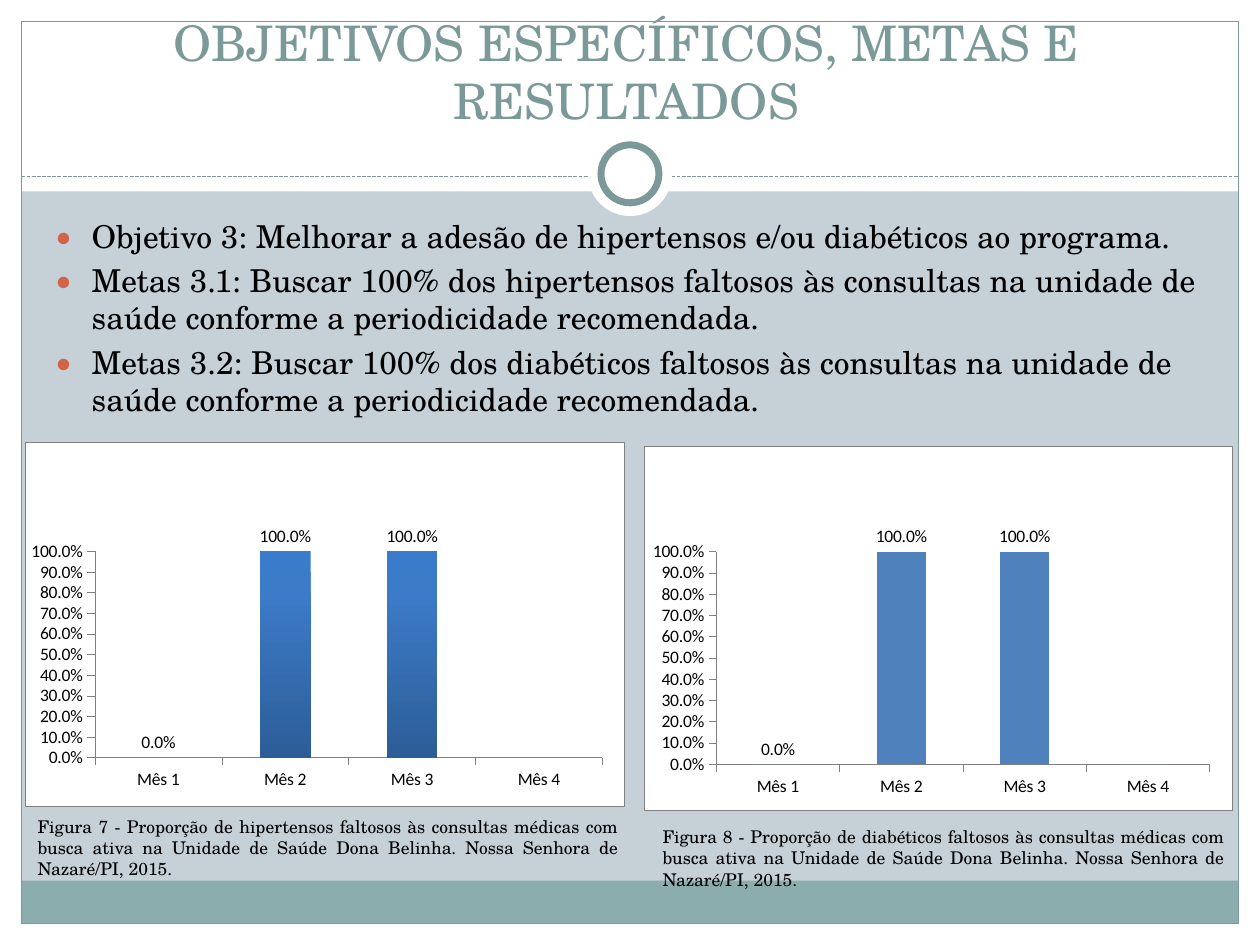
import copy

import pptx
import pptx.chart.data
import pptx.dml.color
import pptx.enum.chart
import pptx.enum.dml
import pptx.enum.shapes
import pptx.enum.text
import pptx.oxml
import pptx.oxml.ns
import pptx.util

RGB = pptx.dml.color.RGBColor
Pt = pptx.util.Pt
SHAPE = pptx.enum.shapes.MSO_SHAPE
ALIGN = pptx.enum.text.PP_ALIGN
qn = pptx.oxml.ns.qn

WHITE, BLACK = RGB(255, 255, 255), RGB(0, 0, 0)
PALE, TEAL, SLATE = RGB(0xC5, 0xD1, 0xD7), RGB(0x8C, 0xAD, 0xAE), RGB(0x7C, 0x99, 0x9A)
ORANGE, GREY, BLUE = RGB(0xD1, 0x63, 0x49), RGB(0x80, 0x80, 0x80), RGB(0x4F, 0x81, 0xBD)
BAR_GRADIENT = [(0, RGB(0x3A, 0x7C, 0xCB)), (0.2, RGB(0x3C, 0x7B, 0xC7)), (1, RGB(0x2C, 0x5D, 0x98))]
SERIF, SANS = "TeX Gyre Schola", "Calibri"

TITLE = "OBJETIVOS ESPECÍFICOS, METAS E RESULTADOS"
GOALS = [
    "Objetivo 3: Melhorar a adesão de hipertensos e/ou diabéticos ao programa.",
    "Metas 3.1: Buscar 100% dos hipertensos faltosos às consultas na unidade de saúde "
    "conforme a periodicidade recomendada.",
    "Metas 3.2: Buscar 100% dos diabéticos faltosos às consultas na unidade de saúde "
    "conforme a periodicidade recomendada.",
]
CAPTION = ("Figura {} - Proporção de {} faltosos às consultas médicas com busca ativa na "
           "Unidade de Saúde Dona Belinha. Nossa Senhora de Nazaré/PI, 2015.")
MONTHS = ["Mês 1", "Mês 2", "Mês 3", "Mês 4"]
RATES = [0, 1, 1, 0]
FIGURES = [
    dict(number=7, group="hipertensos", chart=(0.2, 3.51, 4.76, 2.89), caption=(0.2, 6.43, 4.8, 0.61),
         plot=(0.116, 0.3, 0.847, 0.567), gradient=True),
    dict(number=8, group="diabéticos", chart=(5.11, 3.54, 4.67, 2.89), caption=(5.16, 6.51, 4.65, 0.61),
         plot=(0.123, 0.29, 0.839, 0.584), gradient=False),
]

W, H, MARGIN = 10, 7.5, 0.17
HEADER, BAND, RULE_Y = 1.52, 0.34, 1.4


def inches(*lengths):
    return [pptx.util.Inches(v) for v in lengths]


def add_shape(slide, kind, box, fill=None, line=None, width=0.75):
    sp = slide.shapes.add_shape(kind, *inches(*box))
    sp.shadow.inherit = False
    if fill is None:
        sp.fill.background()
    else:
        sp.fill.solid()
        sp.fill.fore_color.rgb = fill
    if line is None:
        sp.line.fill.background()
    else:
        sp.line.color.rgb = line
        sp.line.width = Pt(width)


def add_frame(slide):
    inner_w, inner_h = W - 2 * MARGIN, H - 2 * MARGIN
    for box in [(0, H - MARGIN, W, MARGIN), (0, 0, W, HEADER),
                (0, 0, MARGIN, H), (W - MARGIN, 0, MARGIN, H)]:
        add_shape(slide, SHAPE.RECTANGLE, box, WHITE)
    add_shape(slide, SHAPE.RECTANGLE, (MARGIN, H - MARGIN - BAND, inner_w, BAND), TEAL)
    add_shape(slide, SHAPE.RECTANGLE, (MARGIN, MARGIN, inner_w, inner_h), line=SLATE)

    rule = slide.shapes.add_connector(pptx.enum.shapes.MSO_CONNECTOR.STRAIGHT,
                                      *inches(MARGIN, RULE_Y, W - MARGIN, RULE_Y))
    rule.line.color.rgb = SLATE
    rule.line.width = Pt(0.75)
    rule.line.dash_style = pptx.enum.dml.MSO_LINE.SQUARE_DOT
    sp_pr = rule._element.spPr
    sp_pr.append(sp_pr.makeelement(qn("a:effectLst"), {}))

    for size, line in [(0.67, None), (0.46, SLATE)]:
        box = (W / 2 - size / 2, 1.38 - size / 2, size, size)
        add_shape(slide, SHAPE.OVAL, box, WHITE, line, 4)


def style(p, size, color, align):
    p.alignment = align
    for r in p.runs:
        r.font.name, r.font.size, r.font.color.rgb = SERIF, Pt(size), color


def add_bullet(p):
    p_pr = p._p.get_or_add_pPr()
    indent = pptx.util.Inches(0.3)
    p_pr.set("marL", str(indent))
    p_pr.set("indent", str(-indent))
    color = p_pr.makeelement(qn("a:buClr"), {})
    color.append(color.makeelement(qn("a:srgbClr"), {"val": str(ORANGE)}))
    p_pr.append(color)
    for tag, key, value in [("a:buSzPct", "val", "85000"), ("a:buFont", "typeface", SERIF),
                            ("a:buChar", "char", "●")]:
        p_pr.append(p_pr.makeelement(qn(tag), {key: value}))


def add_text(slide, box, paragraphs, size, align):
    tf = slide.shapes.add_textbox(*inches(*box)).text_frame
    tf.word_wrap = True
    tf.text = "\n".join(paragraphs)
    for p in tf.paragraphs:
        style(p, size, BLACK, align)
    return tf


def area_format(border):
    """White chart area, with a thin grey border or none."""
    line = f'<a:solidFill><a:srgbClr val="{GREY}"/></a:solidFill>' if border else "<a:noFill/>"
    return pptx.oxml.parse_xml(
        f'<c:spPr {pptx.oxml.ns.nsdecls("c", "a")}><a:solidFill><a:srgbClr val="{WHITE}"/></a:solidFill>'
        f'<a:ln w="{Pt(0.25)}">{line}</a:ln></c:spPr>')


def place_plot(chart, plot):
    """Set the inner plot area as shares of the chart, and fill the backgrounds."""
    area = chart._chartSpace.chart.plotArea
    for old in area.findall(qn("c:layout")):
        area.remove(old)
    shares = "".join(f'<c:{k} val="{v}"/>' for k, v in zip("xywh", plot))
    area.insert(0, pptx.oxml.parse_xml(
        f'<c:layout {pptx.oxml.ns.nsdecls("c")}><c:manualLayout><c:layoutTarget val="inner"/>'
        f'<c:xMode val="edge"/><c:yMode val="edge"/>{shares}</c:manualLayout></c:layout>'))
    area.append(area_format(border=False))
    chart._chartSpace.chart.addnext(area_format(border=True))


def fill_bars(series, gradient):
    fill = series.format.fill
    if not gradient:
        fill.solid()
        fill.fore_color.rgb = BLUE
        return
    fill.gradient()
    fill.gradient_angle = 270
    first = series._element.find(".//" + qn("a:gs"))
    first.addnext(copy.deepcopy(first))
    for stop, (position, color) in zip(fill.gradient_stops, BAR_GRADIENT):
        stop.position, stop.color.rgb = position, color


def label_bars(series):
    labels = series.data_labels
    labels.show_value = True
    labels.number_format, labels.number_format_is_linked = "0.0%", False
    labels.position = pptx.enum.chart.XL_LABEL_POSITION.OUTSIDE_END
    labels._element.insert(0, pptx.oxml.parse_xml(
        f'<c:dLbl {pptx.oxml.ns.nsdecls("c")}><c:idx val="{len(MONTHS) - 1}"/><c:delete val="1"/></c:dLbl>'))


def add_column_chart(slide, box, plot, gradient):
    data = pptx.chart.data.CategoryChartData(number_format="0.0%")
    data.categories = MONTHS
    data.add_series("Series 1", RATES)
    chart = slide.shapes.add_chart(pptx.enum.chart.XL_CHART_TYPE.COLUMN_CLUSTERED,
                                   *inches(*box), data).chart
    chart.has_title = chart.has_legend = False
    chart.font.name, chart.font.size, chart.font.color.rgb = SANS, Pt(10), BLACK
    for axis in (chart.category_axis, chart.value_axis):
        axis.has_major_gridlines = False
        axis.major_tick_mark = pptx.enum.chart.XL_TICK_MARK.OUTSIDE
        axis.format.line.color.rgb = GREY
        axis.format.line.width = Pt(0.25)
    values = chart.value_axis
    values.minimum_scale, values.maximum_scale, values.major_unit = 0, 1, 0.1
    values.tick_labels.number_format = "0.0%"
    values.tick_labels.number_format_is_linked = False
    chart.plots[0].gap_width = 150
    chart.plots[0].vary_by_categories = False
    series = chart.plots[0].series[0]
    fill_bars(series, gradient)
    label_bars(series)
    place_plot(chart, plot)


def add_title(slide):
    title = slide.shapes.title
    title.left, title.top, title.width, title.height = inches(0.14, 0.25, 9.66, 0.83)
    tf = title.text_frame
    tf.text = TITLE
    tf.word_wrap = True
    tf.auto_size = pptx.enum.text.MSO_AUTO_SIZE.NONE
    tf.vertical_anchor = pptx.enum.text.MSO_ANCHOR.BOTTOM
    style(tf.paragraphs[0], 28, SLATE, ALIGN.CENTER)
    slide.shapes._spTree.append(title._element)  # bring in front of the header


def main():
    prs = pptx.Presentation()
    prs.slide_width, prs.slide_height = inches(W, H)
    slide = prs.slides.add_slide(prs.slide_layouts[5])
    slide.background.fill.solid()
    slide.background.fill.fore_color.rgb = PALE
    add_frame(slide)
    for p in add_text(slide, (0.33, 1.67, 9.3, 5), GOALS, 18, ALIGN.LEFT).paragraphs:
        p.space_before = Pt(3.6)
        add_bullet(p)
    for fig in FIGURES:
        add_column_chart(slide, fig["chart"], fig["plot"], fig["gradient"])
        tf = add_text(slide, fig["caption"], [CAPTION.format(fig["number"], fig["group"])], 10, ALIGN.JUSTIFY)
        tf.auto_size = pptx.enum.text.MSO_AUTO_SIZE.SHAPE_TO_FIT_TEXT
    add_title(slide)
    prs.save("out.pptx")


if __name__ == "__main__":
    main()
